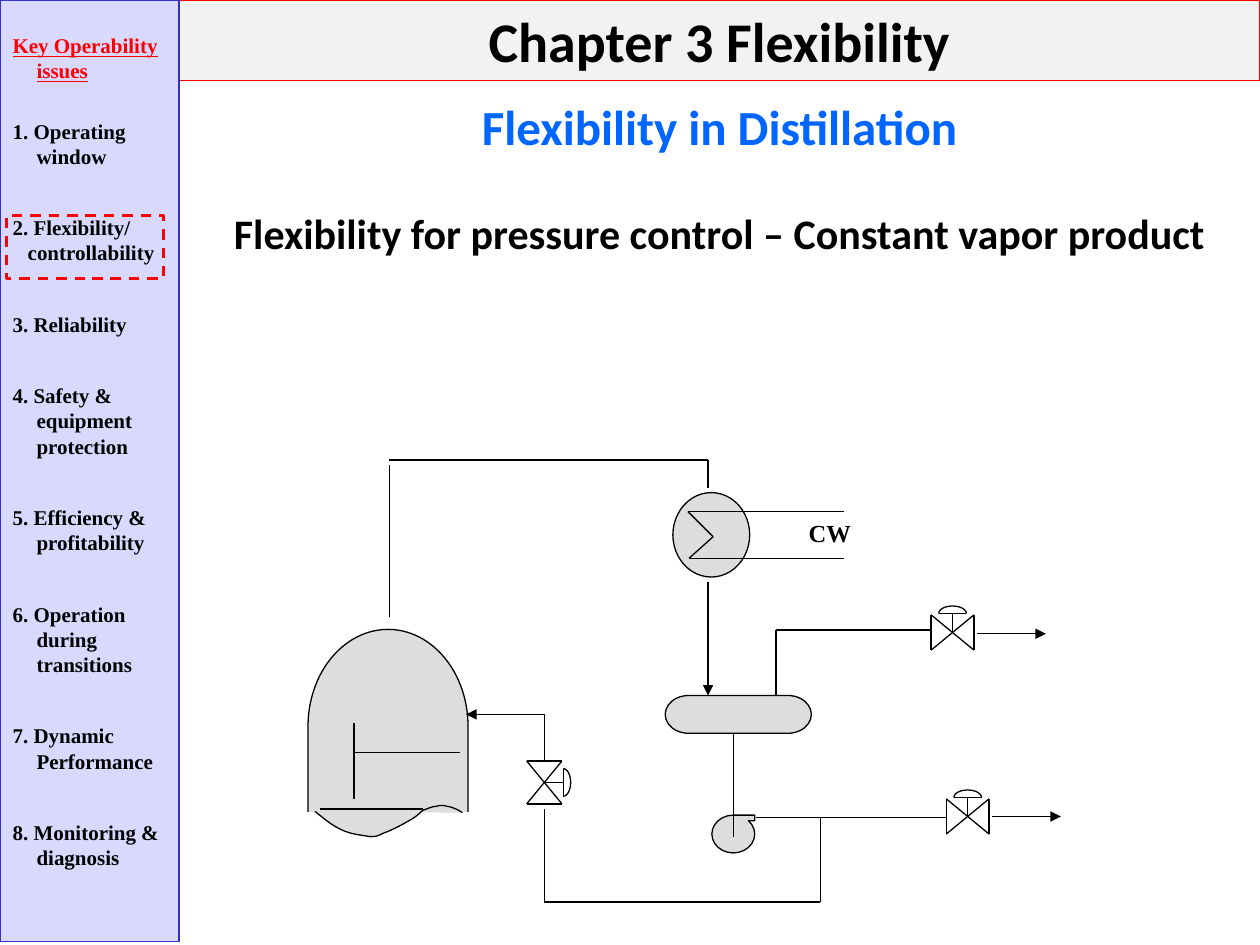
"""Build the slide on flexible pressure control of a distillation column."""
import math
from itertools import pairwise

from pptx import Presentation, util as u
from pptx.dml.color import RGBColor
from pptx.enum import dml, shapes, text
from pptx.oxml import ns
from lxml import etree

TITLE = "Chapter 3 Flexibility"
HEADINGS = [
    ("Flexibility in Distillation", 0.72, 0.57, 28, "0066FF"),
    ("Flexibility for pressure control – Constant vapor product", 1.6, 0.5, 24, "000000"),
]
ISSUES = [
    "Key Operability issues", "1. Operating window", "2. Flexibility/", "controllability",
    "3. Reliability", "4. Safety & equipment protection", "5. Efficiency & profitability",
    "6. Operation during transitions", "7. Dynamic Performance", "8. Monitoring & diagnosis",
]
SERIF, SANS = "Times New Roman", "Calibri"
BLACK, WHITE, RED, GREY = "000000", "FFFFFF", "FF0000", "DDDDDD"
KIND = shapes.MSO_SHAPE

VESSELS = [
    (KIND.FLOWCHART_DELAY, (2.31, 5.13, 1.54, 1.27), GREY, BLACK, 270),
    (KIND.RECTANGLE, (2.33, 6.45, 1.64, 0.3), WHITE, WHITE, 0),
    (KIND.FLOWCHART_TERMINATOR, (5.28, 5.52, 1.16, 0.3), GREY, BLACK, 0),
    (KIND.OVAL, (5.34, 3.91, 0.61, 0.67), GREY, BLACK, 0),
]
PUMP = (5.65, 6.47, 0.34, 0.3)
COLUMN_BASE = [
    (2.5, 6.44), (2.54, 6.47), (2.63, 6.55), (2.7, 6.58), (2.77, 6.62), (2.88, 6.63),
    (2.94, 6.64), (3, 6.64), (3, 6.63), (3.05, 6.61), (3.11, 6.59), (3.22, 6.53),
    (3.27, 6.5), (3.32, 6.47), (3.33, 6.45), (3.36, 6.43), (3.39, 6.42), (3.43, 6.4),
    (3.46, 6.4), (3.49, 6.39), (3.52, 6.39), (3.55, 6.4), (3.57, 6.4), (3.63, 6.42), (3.67, 6.45),
]
PIPES = [
    [(3.09, 4.9), (3.09, 3.69)],
    [(3.09, 3.65), (5.62, 3.65), (5.62, 3.87)],
    [(6.7, 4.06), (5.46, 4.06), (5.66, 4.26), (5.47, 4.43), (6.7, 4.43)],
    [(6.16, 5.52), (6.16, 5), (7.39, 5)],
    [(5.82, 6.64), (5.82, 5.82)],
    [(6, 6.49), (7.51, 6.49)],
    [(6.51, 6.49), (6.51, 7.16), (4.32, 7.16), (4.32, 6.42)],
    [(2.81, 5.74), (2.81, 6.34)],
    [(2.81, 5.97), (3.65, 5.97)],
    [(2.54, 6.42), (3.36, 6.42)],
]
ARROWS = [
    [(4.32, 6.04), (4.32, 5.67), (3.7, 5.67)],
    [(5.62, 4.62), (5.62, 5.52)],
    [(7.75, 5.03), (8.3, 5.03)],
    [(7.87, 6.48), (8.42, 6.48)],
]
VALVES = [(7.68, 6.48, 0.2, False), (7.56, 5.02, 0.2, False), (4.32, 6.21, 0.17, True)]
CAP_BASE, CAP_WIDTH, CAP_HEIGHT = -0.15, 0.11, 0.06


def rgb(value):
    return RGBColor.from_string(value)


def paint(sp, fill=None, line=None, width=0.75):
    if fill:
        sp.fill.solid()
        sp.fill.fore_color.rgb = rgb(fill)
    else:
        sp.fill.background()
    if line:
        sp.line.color.rgb = rgb(line)
        sp.line.width = u.Pt(width)
    else:
        sp.line.fill.background()


def place(sp, box):
    for name, value in zip(("left", "top", "width", "height"), box):
        setattr(sp, name, u.Inches(value))


def write(p, words, size, font, color, **extra):
    r = p.add_run()
    r.text = words
    for name, value in dict(size=u.Pt(size), name=font, bold=True, **extra).items():
        setattr(r.font, name, value)
    r.font.color.rgb = rgb(color)


def shape(s, kind, box, fill=None, line=BLACK, width=0.75):
    sp = s.shapes.add_shape(kind, *map(u.Inches, box))
    sp.shadow.inherit = False
    paint(sp, fill, line, width)
    return sp


def outline(s, points, fill=None):
    spots = [(u.Inches(x), u.Inches(y)) for x, y in points]
    fb = s.shapes.build_freeform(*spots[0], scale=1.0)
    fb.add_line_segments(spots[1:], close=False)
    sp = fb.convert_to_shape()
    sp.shadow.inherit = False
    paint(sp, fill, BLACK)


def pipe(s, points, arrow=False):
    for start, end in pairwise(points):
        sp = s.shapes.add_connector(shapes.MSO_CONNECTOR.STRAIGHT, *map(u.Inches, start + end))
        sp.line.color.rgb = rgb(BLACK)
        sp.line.width = u.Pt(0.75)
        etree.SubElement(sp._element.spPr, ns.qn("a:effectLst"))
        if arrow and end == points[-1]:
            etree.SubElement(sp.line._get_or_add_ln(), ns.qn("a:tailEnd"), type="triangle")


def curve(points, steps=6):
    out = [points[0]]
    for i in range(0, len(points) - 1, 3):
        for t in (n / steps for n in range(1, steps + 1)):
            k = ((1 - t) ** 3, 3 * t * (1 - t) ** 2, 3 * t * t * (1 - t), t ** 3)
            out.append(tuple(sum(a * q[d] for a, q in zip(k, points[i:i + 4])) for d in (0, 1)))
    return out


def valve(s, x, y, half, upright):
    def at(points):
        return [(x - b, y + a) if upright else (x + a, y + b) for a, b in points]
    w, h = (half, 0.14) if upright else (0.17, 0.14)
    pipe(s, at([(-w, h), (-w, -h), (w, h), (w, -h), (-w, h)]))
    pipe(s, at([(0, 0), (0, CAP_BASE)]))
    pipe(s, at([(-CAP_WIDTH, CAP_BASE), (CAP_WIDTH, CAP_BASE)]))
    angles = [math.pi * i / 12 for i in range(13)]
    outline(s, at([(CAP_WIDTH * math.cos(a), CAP_BASE - CAP_HEIGHT * math.sin(a)) for a in angles]))


def text_box(s, box, words, size, font, color, align, wrap=True):
    tf = s.shapes.add_textbox(*map(u.Inches, box)).text_frame
    tf.word_wrap = wrap
    tf.paragraphs[0].alignment = align
    write(tf.paragraphs[0], words, size, font, color)


def sidebar(sp):
    place(sp, (0, 0, 1.42, 7.47))
    paint(sp, "D9D9FF", "3333CC")
    tf = sp.text_frame
    for name, value in dict(auto_size=text.MSO_AUTO_SIZE.NONE, word_wrap=True, margin_top=u.Inches(0.26),
                            vertical_anchor=text.MSO_ANCHOR.TOP).items():
        setattr(tf, name, value)
    for i, words in enumerate(ISSUES):
        p = tf.paragraphs[0] if i == 0 else tf.add_paragraph()
        joined = words == "controllability"
        p.space_before = u.Pt(0 if i == 0 or joined else 20 if i == 1 else 26.4)
        p.line_spacing = u.Pt(14.4)
        p.alignment = text.PP_ALIGN.LEFT
        left, indent = (0.12, 0) if joined else (0.19, -0.19)
        pPr = p._p.get_or_add_pPr()
        pPr.set("marL", str(u.Inches(left)))
        pPr.set("indent", str(u.Inches(indent)))
        etree.SubElement(pPr, ns.qn("a:buNone"))
        write(p, words, 12, SERIF, BLACK if i else RED, underline=i == 0)


def main():
    prs = Presentation()
    prs.slide_width, prs.slide_height = u.Inches(10), u.Inches(7.5)
    s = prs.slides.add_slide(prs.slide_layouts[1])
    sidebar(s.placeholders[1])
    frame = shape(s, KIND.RECTANGLE, (0.05, 1.71, 1.25, 0.5), None, RED, 1.5)
    frame.line.dash_style = dml.MSO_LINE.DASH

    title = s.shapes.title
    place(title, (1.42, 0, 8.58, 0.64))
    paint(title, "F2F2F2", RED)
    title.text_frame.auto_size = text.MSO_AUTO_SIZE.NONE
    write(title.text_frame.paragraphs[0], TITLE, 32, SANS, BLACK)
    for words, top, height, size, color in HEADINGS:
        text_box(s, (1.42, top, 8.58, height), words, size, SANS, color, text.PP_ALIGN.CENTER)

    for kind, box, fill, line, turn in VESSELS:
        shape(s, kind, box, fill, line).rotation = turn
    pump = shape(s, KIND.FLOWCHART_SEQUENTIAL_ACCESS_STORAGE, PUMP, GREY)
    pump._element.spPr.find(ns.qn("a:xfrm")).set("flipV", "1")
    outline(s, curve(COLUMN_BASE), GREY)
    for points in PIPES:
        pipe(s, points)
    for points in ARROWS:
        pipe(s, points, arrow=True)
    for x, y, half, upright in VALVES:
        valve(s, x, y, half, upright)
    text_box(s, (6.32, 4.06, 0.64, 0.46), "CW", 14, SERIF, BLACK, text.PP_ALIGN.LEFT, wrap=False)
    prs.save("out.pptx")


if __name__ == "__main__":
    main()
